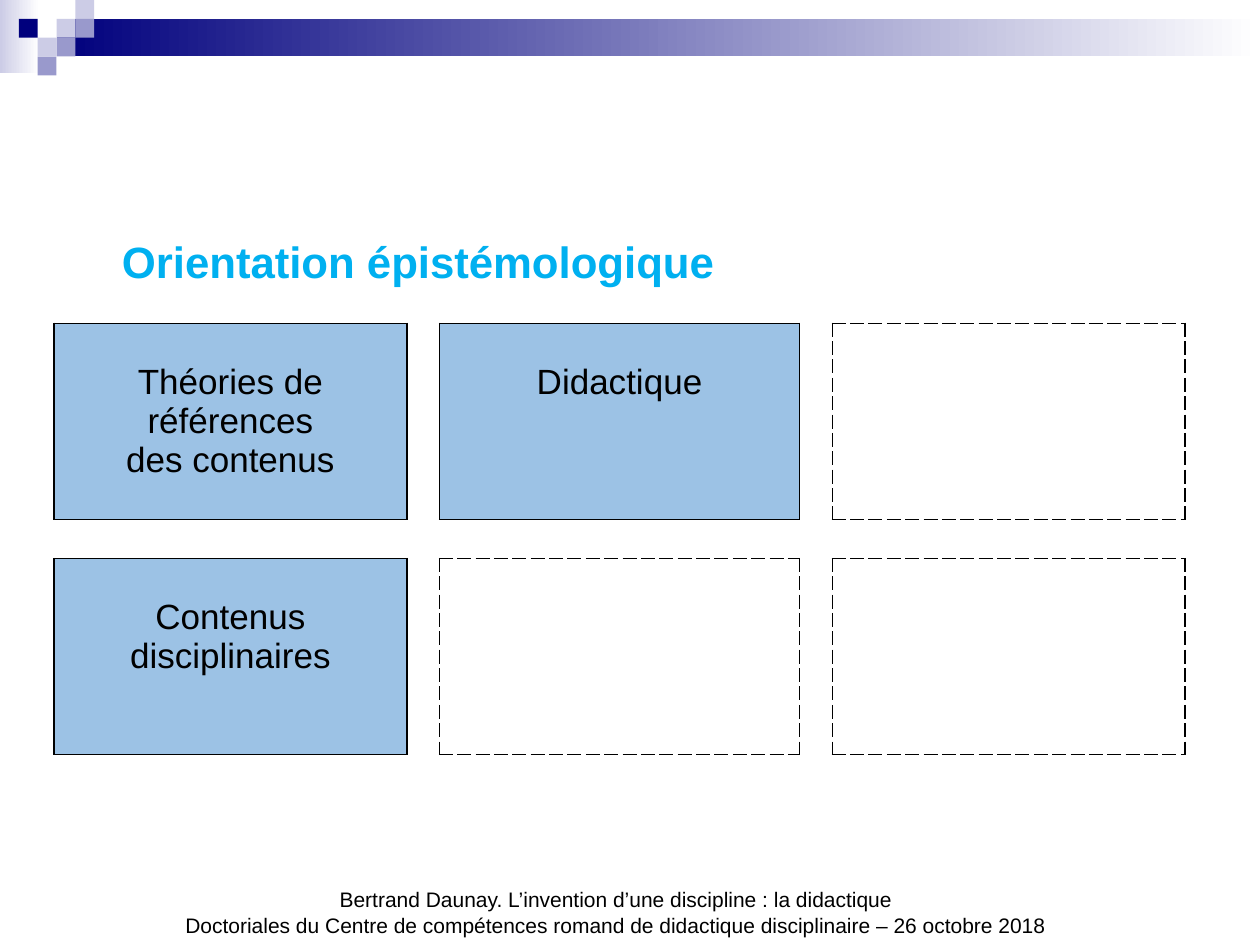
from dataclasses import dataclass

from lxml.etree import SubElement
from pptx import Presentation
from pptx.dml.color import RGBColor
from pptx.enum.shapes import MSO_SHAPE
from pptx.enum.text import MSO_ANCHOR, PP_ALIGN
from pptx.oxml.ns import qn
from pptx.util import Cm, Pt


@dataclass(frozen=True)
class Theme:
    font: str = "Arial"
    ink: str = "000000"
    accent: str = "00B0F0"
    cell: str = "9CC2E5"
    navy: str = "00007D"
    violet: str = "9999CC"
    lavender: str = "CCCCE6"
    white: str = "FFFFFF"
    title_size: int = 25
    cell_size: int = 20
    footer_size: int = 12
    border: int = 1


THEME = Theme()
NO_TABLE_STYLE = "{2D5ABB26-0587-4C30-8999-92F81FD0307C}"

# Mosaic squares: column and row in the mosaic grid, colour
SQUARE = 0.38
MOSAIC = [
    (3, 1, THEME.lavender), (4, 0, THEME.lavender), (4, 1, THEME.violet),
    (2, 2, THEME.lavender), (1, 1, THEME.navy), (3, 2, THEME.violet),
    (2, 3, THEME.violet),
]

# Orientation grid: boxes separated by narrow spacer rows and columns
COLUMNS = [7.11, 0.66, 7.26, 0.66, 7.11]
ROWS = [3.95, 0.79, 3.95]
BOXES = {
    (0, 0): ["Théories de références", "des contenus"],
    (0, 2): ["Didactique"],
    (2, 0): ["Contenus disciplinaires"],
}


def add_block(slide, left, top, width, height, color, fade_to=None):
    block = slide.shapes.add_shape(
        MSO_SHAPE.RECTANGLE, Cm(left), Cm(top), Cm(width), Cm(height))
    block.shadow.inherit = False
    block.line.fill.background()
    if fade_to is None:
        block.fill.solid()
        block.fill.fore_color.rgb = RGBColor.from_string(color)
        return
    block.fill.gradient()
    block.fill.gradient_angle = 0
    for stop, position, shade in zip(
            block.fill.gradient_stops, (0, 1), (color, fade_to)):
        stop.position = position
        stop.color.rgb = RGBColor.from_string(shade)


def write_lines(frame, lines, size, color, align, bold=False):
    frame.word_wrap = True
    for index, line in enumerate(lines):
        paragraph = frame.paragraphs[0] if index == 0 else frame.add_paragraph()
        paragraph.text = line
        paragraph.alignment = align
        paragraph.font.name = THEME.font
        paragraph.font.size = Pt(size)
        paragraph.font.bold = bold
        paragraph.font.color.rgb = RGBColor.from_string(color)


def add_text(slide, left, top, width, height, anchor, *style, **options):
    frame = slide.shapes.add_textbox(
        Cm(left), Cm(top), Cm(width), Cm(height)).text_frame
    frame.vertical_anchor = anchor
    write_lines(frame, *style, **options)


def set_borders(cell, dash):
    properties = cell._tc.get_or_add_tcPr()
    for index, side in enumerate(("lnL", "lnR", "lnT", "lnB")):
        line = SubElement(properties, qn(f"a:{side}"), w=str(Pt(THEME.border)))
        fill = SubElement(line, qn("a:solidFill"))
        SubElement(fill, qn("a:srgbClr"), val=THEME.ink)
        SubElement(line, qn("a:prstDash"), val=dash)
        properties.insert(index, line)  # borders come before the fill


def add_orientation_grid(slide):
    grid = slide.shapes.add_table(
        len(ROWS), len(COLUMNS), Cm(1.09), Cm(6.52),
        Cm(sum(COLUMNS)), Cm(sum(ROWS))).table
    grid.first_row = grid.horz_banding = False
    grid._tbl.tblPr.find(qn("a:tableStyleId")).text = NO_TABLE_STYLE
    for column, width in zip(grid.columns, COLUMNS):
        column.width = Cm(width)
    for row, height in zip(grid.rows, ROWS):
        row.height = Cm(height)

    for r in range(len(ROWS)):
        for c in range(len(COLUMNS)):
            cell = grid.cell(r, c)
            lines = BOXES.get((r, c))
            cell.margin_left = cell.margin_right = Cm(0.18)
            cell.margin_top = Cm(0.8) if lines else 0
            cell.margin_bottom = 0
            if lines:
                cell.fill.solid()
                cell.fill.fore_color.rgb = RGBColor.from_string(THEME.cell)
                write_lines(cell.text_frame, lines, THEME.cell_size,
                            THEME.ink, PP_ALIGN.CENTER)
            else:
                cell.fill.background()
                cell.text_frame.paragraphs[0].font.size = Pt(THEME.footer_size)
            if r % 2 == 0 and c % 2 == 0:
                set_borders(cell, "solid" if lines else "dash")


def add_banner(slide):
    add_block(slide, 0, 0, 0.79, 1.47, THEME.lavender, THEME.white)
    add_block(slide, 3 * SQUARE, SQUARE, 25.4 - 3 * SQUARE, 2 * SQUARE,
              THEME.navy, THEME.white)
    for column, row, color in MOSAIC:
        add_block(slide, column * SQUARE, row * SQUARE, SQUARE, SQUARE, color)


def main():
    deck = Presentation()
    deck.slide_width, deck.slide_height = Cm(25.4), Cm(19.05)
    slide = deck.slides.add_slide(deck.slide_layouts[6])

    add_banner(slide)
    add_orientation_grid(slide)

    # Footer
    add_text(slide, 0.71, 17.75, 23.42, 1.27, MSO_ANCHOR.BOTTOM,
             ["Bertrand Daunay. L’invention d’une discipline : la didactique",
              "Doctoriales du Centre de compétences romand de didactique "
              "disciplinaire – 26 octobre 2018"],
             THEME.footer_size, THEME.ink, PP_ALIGN.CENTER)

    # Title
    add_text(slide, 2.21, 4.6, 15.2, 1.32, MSO_ANCHOR.MIDDLE,
             ["Orientation épistémologique"],
             THEME.title_size, THEME.accent, PP_ALIGN.LEFT, bold=True)

    deck.save("out.pptx")


if __name__ == "__main__":
    main()
